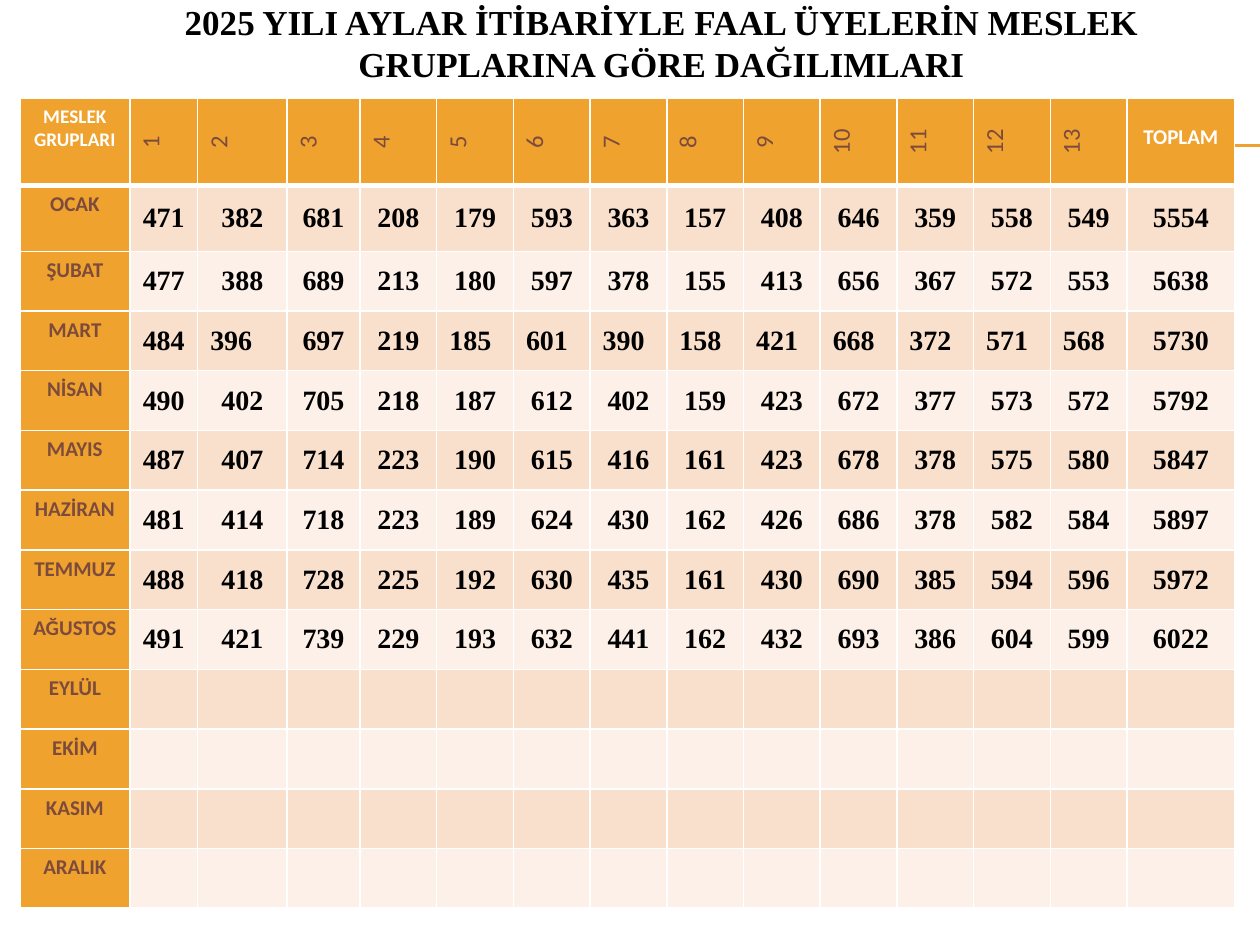
"""Build the 2025 slide of active members by month and profession group."""
from dataclasses import dataclass

from lxml.etree import SubElement
from pptx import Presentation
from pptx.dml.color import RGBColor
from pptx.enum.shapes import MSO_CONNECTOR
from pptx.enum.text import MSO_ANCHOR, PP_ALIGN
from pptx.oxml.ns import qn
from pptx.util import Pt


@dataclass(frozen=True)
class Theme:
    orange: str = "F0A22E"
    brown: str = "7C4B3B"
    white: str = "FFFFFF"
    black: str = "000000"
    bands: tuple = ("F9E0CD", "FCF0E8")
    serif: str = "Times New Roman"
    sans: str = "Calibri"
    title: int = 20
    value: int = 16
    number: int = 14
    label: int = 12
    corner: int = 11


THEME = Theme()
TITLE = "2025 YILI AYLAR İTİBARİYLE FAAL ÜYELERİN MESLEK GRUPLARINA GÖRE DAĞILIMLARI"
HEADER = ["MESLEK GRUPLARI", *map(str, range(1, 14)), "TOPLAM"]
MONTHS = {
    "OCAK": "471 382 681 208 179 593 363 157 408 646 359 558 549 5554",
    "ŞUBAT": "477 388 689 213 180 597 378 155 413 656 367 572 553 5638",
    "MART": "484 396 697 219 185 601 390 158 421 668 372 571 568 5730",
    "NİSAN": "490 402 705 218 187 612 402 159 423 672 377 573 572 5792",
    "MAYIS": "487 407 714 223 190 615 416 161 423 678 378 575 580 5847",
    "HAZİRAN": "481 414 718 223 189 624 430 162 426 686 378 582 584 5897",
    "TEMMUZ": "488 418 728 225 192 630 435 161 430 690 385 594 596 5972",
    "AĞUSTOS": "491 421 739 229 193 632 441 162 432 693 386 604 599 6022",
    "EYLÜL": "",
    "EKİM": "",
    "KASIM": "",
    "ARALIK": "",
}
COLUMN_WIDTHS = [62.8, 38.8, 51, 41.8] + [43.85] * 10 + [61.6]
ROW_HEIGHTS = [49.7, 37.7] + [34.14] * 11
LEFT_ALIGNED = {("MART", col) for col in (2, *range(5, 14))}


def write(tf, text, size, color, font, bold=True, align=PP_ALIGN.CENTER):
    p = tf.paragraphs[0]
    p.text = text
    p.alignment = align
    p.font.size = Pt(size)
    p.font.name = font
    p.font.bold = bold
    p.font.color.rgb = RGBColor.from_string(color)


def add_rule(slide, y):
    line = slide.shapes.add_connector(MSO_CONNECTOR.STRAIGHT, Pt(40.3), Pt(y), Pt(720), Pt(y))
    line.line.color.rgb = RGBColor.from_string(THEME.orange)
    line.line.width = Pt(0.75)
    SubElement(line._element.spPr, qn("a:effectLst"))


def add_title(slide):
    tf = slide.shapes.add_textbox(Pt(36), Pt(0), Pt(684), Pt(48.2)).text_frame
    tf.word_wrap = True
    tf.vertical_anchor = MSO_ANCHOR.MIDDLE
    write(tf, TITLE, THEME.title, THEME.black, THEME.serif)


def style_cell(cell, fill, top=1, bottom=1):
    tc_pr = cell._tc.get_or_add_tcPr()
    for side, width in (("L", 1), ("R", 1), ("T", top), ("B", bottom)):
        ln = SubElement(tc_pr, qn(f"a:ln{side}"), w=str(Pt(width)))
        SubElement(SubElement(ln, qn("a:solidFill")), qn("a:srgbClr"), val=THEME.white)
    cell.fill.solid()
    cell.fill.fore_color.rgb = RGBColor.from_string(fill)


def fill_header(table):
    for col, text in enumerate(HEADER):
        cell = table.cell(0, col)
        style_cell(cell, THEME.orange, bottom=3)
        if text.isdigit():
            cell._tc.tcPr.set("vert", "vert270")
            write(cell.text_frame, text, THEME.number, THEME.brown, THEME.sans, bold=False)
        else:
            size = THEME.label if col else THEME.corner
            write(cell.text_frame, text, size, THEME.white, THEME.sans)
    cell.vertical_anchor = MSO_ANCHOR.BOTTOM
    cell.margin_bottom = Pt(20)


def fill_month(table, row, month, values):
    top = 3 if row == 1 else 1
    label = table.cell(row, 0)
    style_cell(label, THEME.orange, top)
    write(label.text_frame, month, THEME.label, THEME.brown, THEME.sans)
    for col in range(1, len(HEADER)):
        style_cell(table.cell(row, col), THEME.bands[(row - 1) % 2], top)
    for col, value in enumerate(values, 1):
        cell = table.cell(row, col)
        cell.vertical_anchor = MSO_ANCHOR.MIDDLE
        align = PP_ALIGN.LEFT if (month, col) in LEFT_ALIGNED else PP_ALIGN.CENTER
        write(cell.text_frame, value, THEME.value, THEME.black, THEME.serif, align=align)


def add_member_table(slide):
    table = slide.shapes.add_table(
        len(ROW_HEIGHTS), len(COLUMN_WIDTHS), Pt(11.4), Pt(56.2),
        Pt(sum(COLUMN_WIDTHS)), Pt(sum(ROW_HEIGHTS))).table
    for column, width in zip(table.columns, COLUMN_WIDTHS):
        column.width = Pt(width)
    for row, height in zip(table.rows, ROW_HEIGHTS):
        row.height = Pt(height)
    fill_header(table)
    for row, (month, values) in enumerate(MONTHS.items(), 1):
        fill_month(table, row, month, values.split())


def main():
    prs = Presentation()
    prs.slide_width, prs.slide_height = Pt(720), Pt(540)
    slide = prs.slides.add_slide(prs.slide_layouts[6])
    for y in (82.8, 83.5):
        add_rule(slide, y)
    add_title(slide)
    add_member_table(slide)
    prs.save("out.pptx")


if __name__ == "__main__":
    main()
